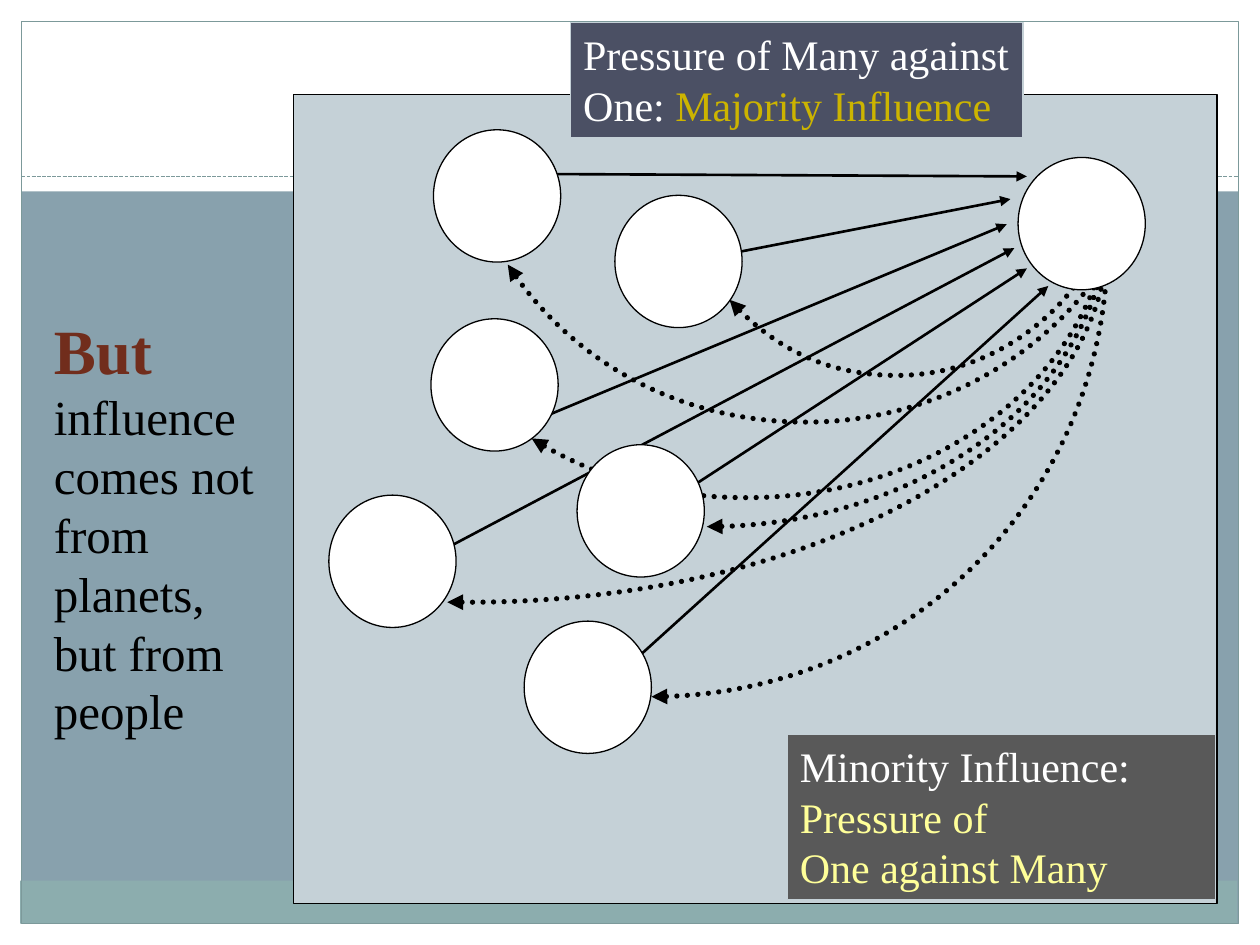
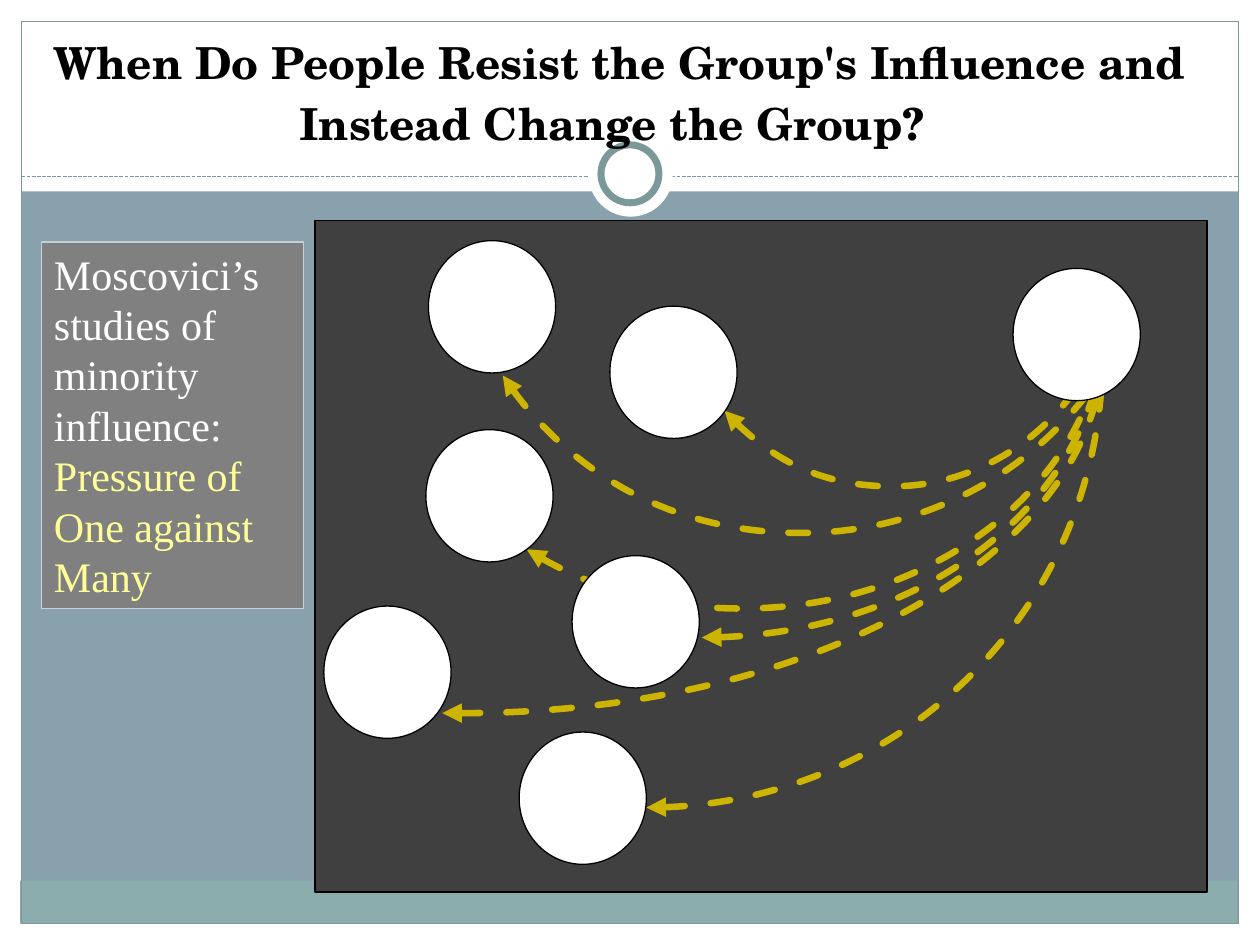
from dataclasses import dataclass

from lxml import etree
from pptx import Presentation
from pptx.dml.color import RGBColor
from pptx.enum.dml import MSO_LINE
from pptx.enum.shapes import MSO_CONNECTOR, MSO_SHAPE
from pptx.enum.text import MSO_ANCHOR, MSO_AUTO_SIZE, PP_ALIGN
from pptx.oxml.ns import qn
from pptx.util import Inches, Pt

RECTANGLE, OVAL = MSO_SHAPE.RECTANGLE, MSO_SHAPE.OVAL
DOTTED, DASHED, FINE_DASHED = MSO_LINE.ROUND_DOT, MSO_LINE.DASH, MSO_LINE.SQUARE_DOT
STRAIGHT = MSO_CONNECTOR.STRAIGHT
TOP, BOTTOM = MSO_ANCHOR.TOP, MSO_ANCHOR.BOTTOM
CENTER, LEFT = PP_ALIGN.CENTER, PP_ALIGN.LEFT
NO_AUTOFIT = MSO_AUTO_SIZE.NONE


@dataclass(frozen=True)
class Theme:
    title_font: str = "TeX Gyre Schola"
    body_font: str = "Times New Roman"
    title_size: float = 25.2
    title_end_size: float = 29.7
    label_size: float = 24
    side_size: float = 28
    lead_size: float = 36
    background: str = "88A1AD"
    white: str = "FFFFFF"
    black: str = "000000"
    footer: str = "8CADAE"
    frame: str = "7C999A"
    pale: str = "C5D1D7"
    charcoal: str = "404040"
    navy: str = "4B5064"
    dark_gray: str = "595959"
    gray: str = "808080"
    gold: str = "CCB400"
    yellow: str = "FFFF99"
    rust: str = "712D1C"


theme = Theme()


def add_box(shapes, kind, area, fill=None, line=None, width=0.75):
    """Add a preset shape without shadow; a colour of None leaves that part empty."""
    box = shapes.add_shape(kind, *map(Inches, area))
    box.shadow.inherit = False
    for part, color in ((box.fill, fill), (box.line.fill, line)):
        if color:
            part.solid()
            part.fore_color.rgb = RGBColor.from_string(color)
        else:
            part.background()
    if line:
        box.line.width = Pt(width)
    return box


def style_stroke(stroke, color, width, dash=None, arrow_end=None):
    """Style a connector or open curve; arrow_end is "headEnd" or "tailEnd"."""
    stroke.line.color.rgb = RGBColor.from_string(color)
    stroke.line.width = Pt(width)
    if dash:
        stroke.line.dash_style = dash
    properties = stroke.element.spPr
    outline = properties.get_or_add_ln()
    if arrow_end:
        etree.SubElement(outline, qn("a:" + arrow_end), type="triangle")
    if properties.find(qn("a:effectLst")) is None:
        etree.SubElement(properties, qn("a:effectLst"))
    return outline


deck = Presentation()
deck.slide_width, deck.slide_height = Inches(10), Inches(7.5)
master = deck.slide_master
title_layout, blank_layout = deck.slide_layouts[5], deck.slide_layouts[6]
majority_page = deck.slides.add_slide(blank_layout)
minority_page = deck.slides.add_slide(title_layout)

# Shared frame on the master, ring on the title layout
master.background.fill.solid()
master.background.fill.fore_color.rgb = RGBColor.from_string(theme.background)
shapes = majority_page.shapes
margins = [(0, 7.33, 10, 0.17), (0, 0, 10, 1.52), (0, 0, 0.17, 7.5), (9.83, 0, 0.17, 7.5)]
frame = [add_box(shapes, RECTANGLE, area, theme.white) for area in margins]
frame.append(add_box(shapes, RECTANGLE, (0.16, 6.99, 9.66, 0.34), theme.footer))
frame.append(add_box(shapes, RECTANGLE, (0.17, 0.17, 9.66, 7.16), line=theme.frame))
rule = shapes.add_connector(STRAIGHT, *map(Inches, (0.17, 1.4, 9.83, 1.4)))
style_stroke(rule, theme.frame, 0.75, FINE_DASHED)
frame.append(rule)
ring = [
    add_box(shapes, OVAL, (4.67, 1.05, 0.67, 0.67), theme.white),
    add_box(shapes, OVAL, (4.77, 1.15, 0.46, 0.46), theme.white, theme.frame, 4),
]
for holder, parts in ((master, frame), (title_layout, ring)):
    for position, part in enumerate(parts):
        part.element.xpath(".//p:cNvPr")[0].set("id", str(100 + position))
        holder.shapes.element.insert(2 + position, part.element)

# Title
title = minority_page.shapes.title
title.left, title.top, title.width, title.height = map(Inches, (0.25, 0.42, 9.33, 0.83))
title.text_frame.auto_size = NO_AUTOFIT
title.text_frame.vertical_anchor = BOTTOM
para = title.text_frame.paragraphs[0]
para.alignment = CENTER
for text, size, bold in (
    ("When Do People Resist the Group's Influence and Instead Change the Group?", theme.title_size, True),
    (" ", theme.title_end_size, False),
):
    span = para.add_run()
    span.text = text
    span.font.name, span.font.size, span.font.bold = theme.title_font, Pt(size), bold
    span.font.color.rgb = RGBColor.from_string(theme.black)

# Panels and the straight arrows of the majority
add_box(majority_page.shapes, RECTANGLE, (2.33, 0.75, 7.33, 6.42), theme.pale, theme.black)
add_box(minority_page.shapes, RECTANGLE, (2.5, 1.75, 7.08, 5.33), theme.charcoal, theme.black)
majority_arrows = [
    (4.09, 1.38, 8.15, 1.4), (4.29, 3.32, 7.99, 1.78), (5.11, 4.11, 8.15, 2.13),
    (5.86, 2, 8.02, 1.58), (3.45, 4.4, 8.05, 1.97), (5.08, 5.2, 8.32, 2.27),
]
for ends in majority_arrows:
    arrow = majority_page.shapes.add_connector(STRAIGHT, *map(Inches, ends))
    style_stroke(arrow, theme.black, 1.5, arrow_end="tailEnd")

# Curves of the minority: a start point, then three points for each Bezier segment
minority_curves = [
    [(4.03, 2.1), (4.54, 2.88), (5.44, 3.35), (6.4, 3.35), (7.28, 3.35), (8.12, 2.95), (8.65, 2.27)],
    [(5.79, 2.38), (6.14, 2.77), (6.61, 2.98), (7.12, 2.98), (7.99, 2.98), (8.75, 2.32), (8.91, 1.41)],
    [(4.22, 3.48), (4.71, 3.79), (5.31, 3.95), (5.93, 3.95), (7.53, 3.95), (8.82, 2.87), (8.82, 1.55)],
    [(5.17, 5.53), (7.17, 5.53), (8.79, 3.92), (8.79, 1.93)],
    [(5.61, 4.18), (7.37, 4.18), (8.81, 3.04), (8.81, 1.63)],
    [(3.55, 4.78), (3.61, 4.78), (3.66, 4.78), (3.72, 4.78), (6.52, 4.78), (8.79, 3.48), (8.79, 1.88)],
]
people = [(3.44, 1.03), (4.16, 4.93), (8.08, 1.25), (3.42, 2.53), (4.88, 1.55), (4.58, 3.53), (2.61, 3.93)]

for page, shift_x, shift_y, color, width, dash in (
    (majority_page, 0, 0, theme.black, 3, DOTTED),
    (minority_page, -0.04, 0.88, theme.gold, 3.75, DASHED),
):
    for curve in minority_curves:
        points = [(Inches(x + shift_x), Inches(y + shift_y)) for x, y in curve]
        builder = page.shapes.build_freeform(*points[0], scale=1.0)
        builder.add_line_segments(points[1:], close=False)
        arc = builder.convert_to_shape()
        segments = arc.element.xpath(".//a:lnTo")
        for first in range(0, len(segments), 3):
            bezier = etree.Element(qn("a:cubicBezTo"))
            segments[first].addprevious(bezier)
            for segment in segments[first:first + 3]:
                bezier.append(segment[0])
                segment.getparent().remove(segment)
        arc.fill.background()
        arc.shadow.inherit = False
        style_stroke(arc, color, width, dash, "headEnd").set("cap", "rnd")
    for x, y in people:
        add_box(page.shapes, OVAL, (x + shift_x, y + shift_y, 1.01, 1.05), theme.white, theme.black)

# Labels: page, area, fill, wrap, paragraphs of (text, colour, size, bold)
size = theme.label_size
pressure = [
    [(" Pressure of", theme.yellow, size, False)],
    [("One against Many", theme.yellow, size, False)],
]
labels = [
    (majority_page, (4.53, 0.18, 3.59, 0.91), theme.navy, False, [
        [("Pressure of Many against", theme.white, size, False)],
        [("One: ", theme.white, size, False), ("Majority Influence", theme.gold, size, False)],
    ]),
    (majority_page, (6.25, 5.83, 3.4, 1.31), theme.dark_gray, True, [
        [("Minority Influence:", theme.white, size, False)] + pressure[0], pressure[1],
    ]),
    (majority_page, (0.33, 2.42, 1.83, 3.53), None, True, [
        [("But ", theme.rust, theme.lead_size, True),
         ("influence comes not from planets, but from people", theme.black, theme.side_size, False)],
    ]),
    (minority_page, (0.33, 1.92, 2.08, 2.91), theme.gray, True, [
        [("Moscovici’s studies of minority influence:", theme.white, size, False)] + pressure[0], pressure[1],
    ]),
]
for page, area, fill, wrap, paragraphs in labels:
    if fill:
        box = add_box(page.shapes, RECTANGLE, area, fill, theme.pale)
    else:
        box = page.shapes.add_textbox(*map(Inches, area))
    text_frame = box.text_frame
    text_frame.word_wrap = wrap
    text_frame.vertical_anchor = TOP
    for number, spans in enumerate(paragraphs):
        para = text_frame.add_paragraph() if number else text_frame.paragraphs[0]
        para.alignment = LEFT
        for text, color, points, bold in spans:
            span = para.add_run()
            span.text = text
            span.font.name, span.font.size, span.font.bold = theme.body_font, Pt(points), bold
            span.font.color.rgb = RGBColor.from_string(color)

deck.save("out.pptx")
